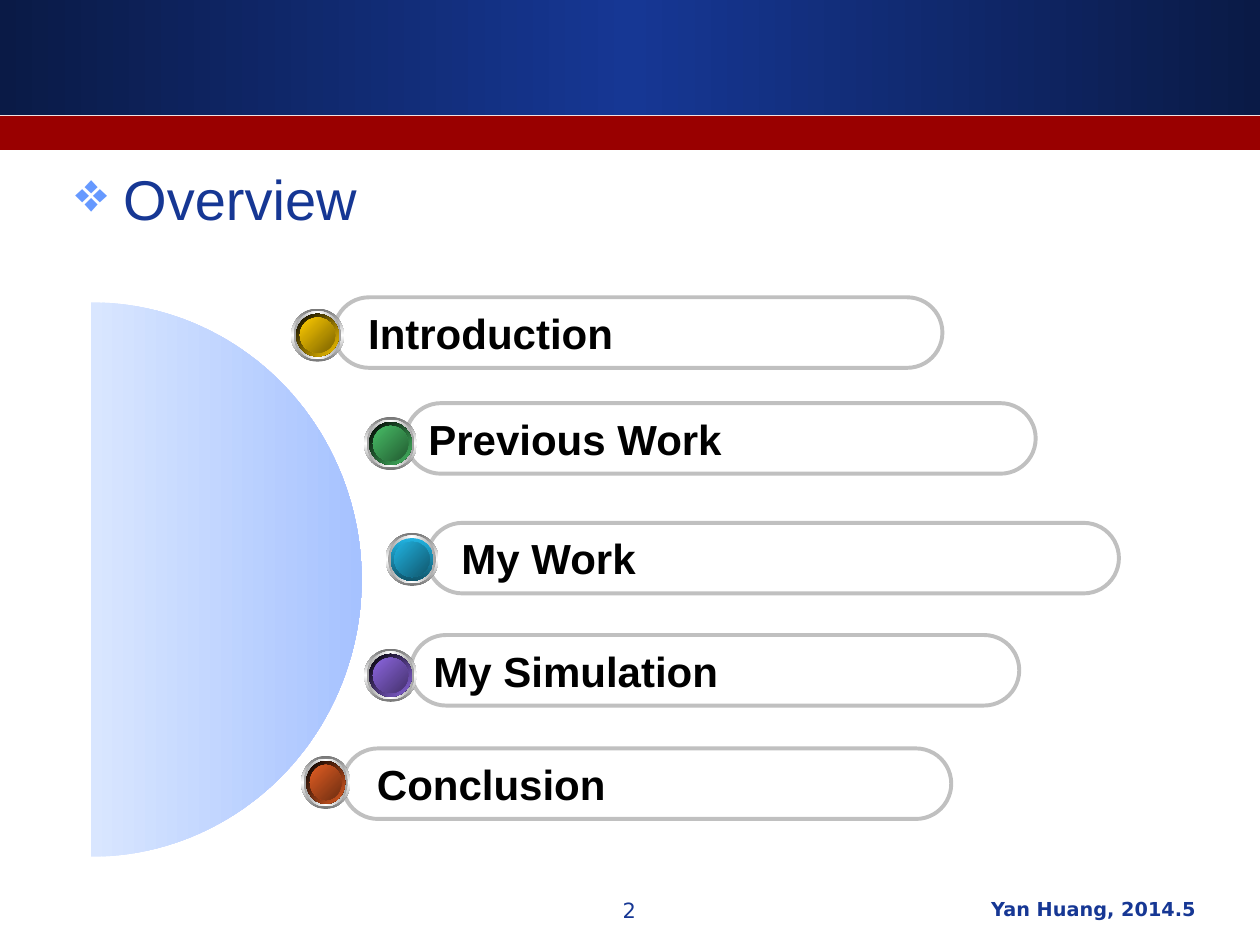
from math import cos, pi, sin

from lxml.etree import SubElement
from pptx import Presentation
from pptx.dml.color import RGBColor as RGB
from pptx.enum.shapes import MSO_SHAPE as Shape
from pptx.enum.text import MSO_ANCHOR as Anchor, PP_ALIGN as Align
from pptx.oxml.ns import qn
from pptx.util import Inches, Pt

WIDTH, HEIGHT = 10, 7.5
NAVY, MIDNIGHT = RGB(0x16, 0x37, 0x94), RGB(0x0A, 0x1A, 0x46)
RED, SKY = RGB(0x99, 0, 0), RGB(0x66, 0x99, 0xFF)
PALE, SOFT = RGB(0xD9, 0xE6, 0xFF), RGB(0xA6, 0xC2, 0xFF)
BLACK, WHITE = RGB(0, 0, 0), RGB(0xFF, 0xFF, 0xFF)
SILVER, STEEL, ASH = RGB(0xC0, 0xC0, 0xC0), RGB(0x76, 0x76, 0x76), RGB(0xA2, 0xA2, 0xA2)
GOLD, DARK_GOLD = RGB(0xFF, 0xCC, 0), RGB(0x7C, 0x63, 0)
GREEN, DARK_GREEN = RGB(0x48, 0xBE, 0x67), RGB(0x23, 0x5C, 0x32)
CYAN, DARK_CYAN = RGB(0x21, 0xB3, 0xE1), RGB(0x10, 0x57, 0x6D)
VIOLET, DARK_VIOLET = RGB(0x8D, 0x67, 0xE1), RGB(0x45, 0x32, 0x6D)
ORANGE, DARK_ORANGE = RGB(0xE3, 0x5E, 0x23), RGB(0x6E, 0x2E, 0x11)

PILL_HEIGHT, BUTTON_HEIGHT = 0.56, 0.42
TOPICS = [
    dict(text="Introduction", pill=(2.65, 2.36, 4.83), inset=0.19,
         button=(2.31, 2.45, 0.42), rim=(BLACK, GOLD, 45), face=(GOLD, DARK_GOLD)),
    dict(text="Previous Work", pill=(3.22, 3.2, 5), inset=0.1,
         button=(2.89, 3.31, 0.42), rim=(BLACK, GREEN, 45), face=(GREEN, DARK_GREEN)),
    dict(text="My Work", pill=(3.39, 4.15, 5.49), inset=0.19,
         button=(3.06, 4.23, 0.42), rim=(CYAN, DARK_CYAN, 90), face=(CYAN, DARK_CYAN)),
    dict(text="My Simulation", pill=(3.26, 5.04, 4.83), inset=0.1,
         button=(2.89, 5.15, 0.42), rim=(BLACK, VIOLET, 45), face=(VIOLET, DARK_VIOLET)),
    dict(text="Conclusion", pill=(2.72, 5.94, 4.83), inset=0.19,
         button=(2.39, 6, 0.39), rim=(BLACK, ORANGE, 45), face=(ORANGE, DARK_ORANGE)),
]
TEXTS = [
    dict(text="Overview", area=(0.5, 1.26, 9, 5.74), align=Align.LEFT, bullet="❖",
         font=dict(name="Arial", size=Pt(32), bold=False), color=NAVY),
    dict(text="2", area=(3.83, 7.07, 2.33, 0.35), align=Align.CENTER,
         font=dict(name="DejaVu Sans", size=Pt(12), bold=False), color=NAVY),
    dict(text="Yan Huang, 2014.5", area=(6.42, 7.07, 3.17, 0.35), align=Align.RIGHT,
         font=dict(name="DejaVu Sans", size=Pt(11), bold=True), color=NAVY),
]
PILL_FONT = dict(name="Arial", size=Pt(24), bold=True)
DISC = dict(center=(0.72, 4.6), radii=(2.15, 2.2), steps=90)


def set_gradient(shape, colors, angle):
    shape.fill.gradient()
    gradient = shape._element.spPr.find(qn("a:gradFill"))
    gradient.find(qn("a:lin")).set("ang", str(angle * 60000))
    stops = gradient.find(qn("a:gsLst"))
    for stop in list(stops):
        stops.remove(stop)
    for index, color in enumerate(colors):
        stop = SubElement(stops, qn("a:gs"), pos=str(index * 100000 // (len(colors) - 1)))
        SubElement(stop, qn("a:srgbClr"), val=str(color))


def add_plain(page, kind, area):
    shape = page.shapes.add_shape(kind, *map(Inches, area))
    shape.shadow.inherit = False
    shape.line.fill.background()
    return shape


def write(frame, text, font, color, align=Align.LEFT):
    frame.word_wrap = True
    para = frame.paragraphs[0]
    para.alignment = align
    span = para.add_run()
    span.text = text
    for name, value in font.items():
        setattr(span.font, name, value)
    span.font.color.rgb = color
    return para


def set_bullet(para, mark, color, indent):
    properties = para._p.get_or_add_pPr()
    properties.set("marL", str(Inches(indent)))
    properties.set("indent", str(-Inches(indent)))
    SubElement(SubElement(properties, qn("a:buClr")), qn("a:srgbClr"), val=str(color))
    SubElement(properties, qn("a:buChar"), char=mark)


def add_banner(page):
    set_gradient(add_plain(page, Shape.RECTANGLE, (0, 0, WIDTH, 0.91)),
                 (MIDNIGHT, NAVY, MIDNIGHT), 0)
    stripe = add_plain(page, Shape.RECTANGLE, (0, 0.92, WIDTH, 0.27))
    stripe.fill.solid()
    stripe.fill.fore_color.rgb = RED


def add_half_disc(page, center, radii, steps):
    angles = [pi * step / steps - pi / 2 for step in range(steps + 1)]
    points = [(Inches(center[0] + radii[0] * cos(angle)),
               Inches(center[1] + radii[1] * sin(angle))) for angle in angles]
    outline = page.shapes.build_freeform(*points[0])
    outline.add_line_segments(points[1:], close=True)
    disc = outline.convert_to_shape()
    disc.shadow.inherit = False
    disc.line.fill.background()
    set_gradient(disc, (PALE, SOFT), 0)


def add_pill(page, text, area, inset):
    pill = add_plain(page, Shape.ROUNDED_RECTANGLE, area)
    pill.adjustments[0] = 0.5
    pill.fill.background()
    pill.line.color.rgb = SILVER
    pill.line.width = Pt(2.25)
    frame = pill.text_frame
    frame.vertical_anchor = Anchor.MIDDLE
    frame.margin_left = Inches(inset)
    write(frame, text, PILL_FONT, BLACK)


def add_button(page, place, rim, face):
    left, top, width = place
    layers = [
        (0, (STEEL, WHITE, STEEL), 90),
        (0.02, (ASH, WHITE, ASH), 0),
        (0.04, rim[:2], rim[2]),
        (0.07, face, 45),
    ]
    for gap, colors, angle in layers:
        area = (left + gap, top + gap, width - 2 * gap, BUTTON_HEIGHT - 2 * gap)
        set_gradient(add_plain(page, Shape.OVAL, area), colors, angle)


def main():
    deck = Presentation()
    deck.slide_width, deck.slide_height = Inches(WIDTH), Inches(HEIGHT)
    page = deck.slides.add_slide(deck.slide_layouts[6])
    add_banner(page)
    add_half_disc(page, **DISC)
    for topic in TOPICS:
        add_pill(page, topic["text"], (*topic["pill"], PILL_HEIGHT), topic["inset"])
        add_button(page, topic["button"], topic["rim"], topic["face"])
    for item in TEXTS:
        box = page.shapes.add_textbox(*map(Inches, item["area"]))
        para = write(box.text_frame, item["text"], item["font"], item["color"], item["align"])
        if "bullet" in item:
            set_bullet(para, item["bullet"], SKY, 0.38)
    deck.save("out.pptx")


if __name__ == "__main__":
    main()
